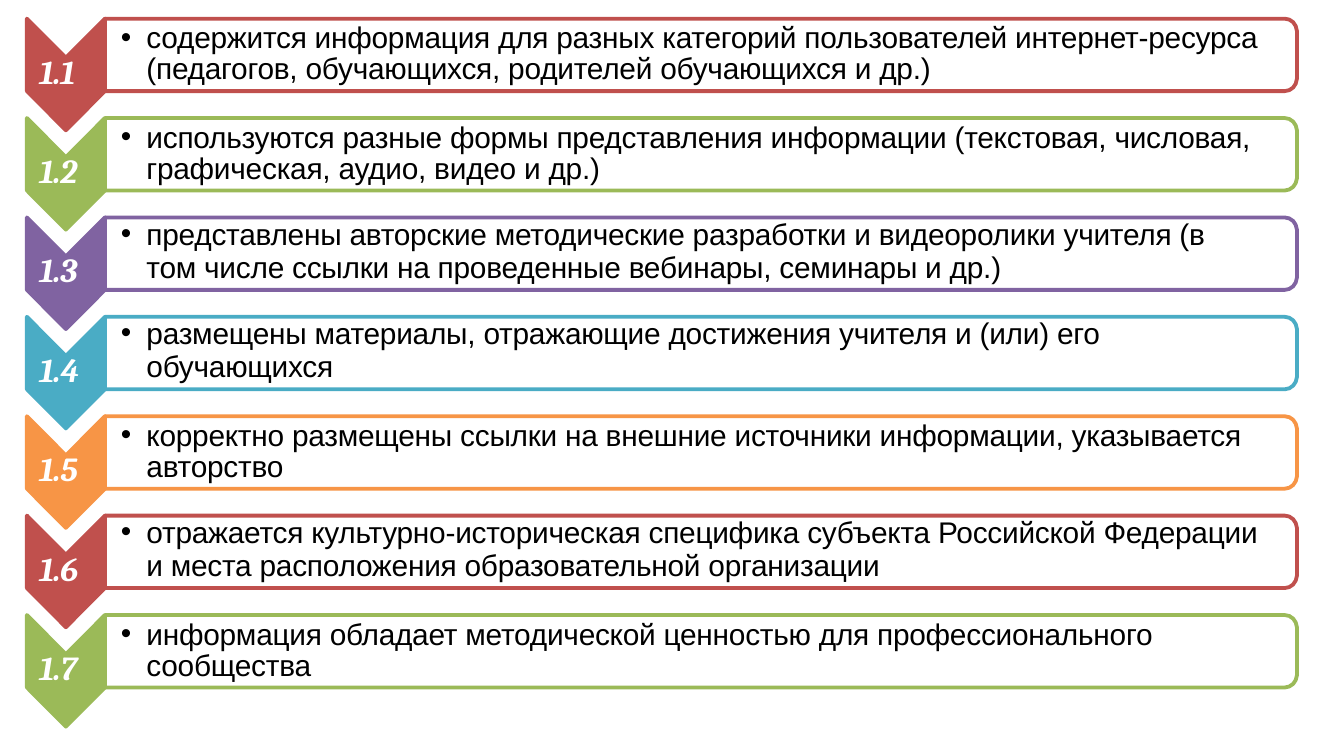
from itertools import cycle
from pptx import Presentation
from pptx.dml.color import RGBColor
from pptx.oxml import parse_xml
from pptx.oxml.ns import nsdecls
from pptx.util import Pt

WHITE = RGBColor(0xFF, 0xFF, 0xFF)
BLACK = RGBColor(0x00, 0x00, 0x00)
RED = RGBColor(0xC0, 0x50, 0x4D)
GREEN = RGBColor(0x9B, 0xBA, 0x58)
PURPLE = RGBColor(0x80, 0x63, 0xA1)
TEAL = RGBColor(0x4A, 0xAC, 0xC5)
ORANGE = RGBColor(0xF7, 0x95, 0x46)
HUES = [RED, GREEN, PURPLE, TEAL, ORANGE]

LEFT, TOP, PITCH = 14.4, 10, 53.25
ARROW, NOTCH, BAR, TALL = 41.8, 21, 638.6, 38.8

ITEMS = [
    ["содержится информация для разных категорий пользователей интернет-ресурса "
     "(педагогов, обучающихся, родителей обучающихся и др.)"],
    ["используются разные формы представления информации (текстовая, числовая, "
     "графическая, аудио, видео и др.)"],
    ["представлены авторские методические разработки и видеоролики учителя (в",
     "том числе ссылки на проведенные вебинары, семинары и др.)"],
    ["размещены материалы, отражающие достижения учителя и (или) его",
     "обучающихся"],
    ["корректно размещены ссылки на внешние источники информации, указывается "
     "авторство"],
    ["отражается культурно-историческая специфика субъекта Российской Федерации",
     "и места расположения образовательной организации"],
    ["информация обладает методической ценностью для профессионального "
     "сообщества"],
]


def add_form(slide, left, top, points, fill, hue):
    spots = [(Pt(left + x), Pt(top + y)) for x, y in points]
    pen = slide.shapes.build_freeform(*spots[0])
    pen.add_line_segments(spots[1:], close=True)
    form = pen.convert_to_shape()
    form.shadow.inherit = False
    form.fill.solid()
    form.fill.fore_color.rgb = fill
    form.line.color.rgb = hue
    form.line.width = Pt(2.04)


def add_frame(slide, left, top, width, height, inset):
    frame = slide.shapes.add_textbox(Pt(left), Pt(top), Pt(width), Pt(height)).text_frame
    frame.word_wrap = True
    frame.margin_left = frame.margin_right = frame.margin_bottom = 0
    frame.margin_top = Pt(inset)
    return frame


def set_font(para, name, size, color):
    para.font.name = name
    para.font.size = Pt(size)
    para.font.color.rgb = color
    para._p.get_or_add_pPr().get_or_add_defRPr().set("spc", "-10")


def add_arrow(slide, left, top, label, hue):
    mid = ARROW / 2
    points = [(ARROW, 0), (mid, NOTCH), (0, 0), (0, TALL),
              (mid, TALL + NOTCH), (ARROW, TALL)]
    add_form(slide, left, top, points, hue, hue)
    para = add_frame(slide, left + 6.7, top + 16.4, 28, 23.8, 0.7).paragraphs[0]
    para.text = label
    set_font(para, "Cambria", 18, WHITE)
    para.font.bold = para.font.italic = True


def add_bar(slide, left, top, lines, hue):
    curve = [(6.5, 0), (4.1, 0.5), (2, 1.9), (0.6, 4), (0, 6.5)]
    upper = [(BAR - x, y) for x, y in curve]
    lower = [(x, TALL - y) for x, y in reversed(upper)]
    add_form(slide, left, top, [(0, 0), *upper, *lower, (0, TALL)], WHITE, hue)
    split = len(lines) > 1
    frame = add_frame(slide, left + 0.7, top - 0.8, 635.8, 37.4, 0.9 if split else 3.6)
    for rank, line in enumerate(lines):
        para = frame.add_paragraph() if rank else frame.paragraphs[0]
        para.text = line
        para.line_spacing = Pt(17.9 if split else 16.6)
        props = para._p.get_or_add_pPr()
        props.set("marL", str(Pt(21.6)))
        props.set("indent", str(0 if rank else -Pt(13.7)))
        if not rank:
            props.append(parse_xml(f'<a:buFont {nsdecls("a")} typeface="Arial"/>'))
            props.append(parse_xml(f'<a:buChar {nsdecls("a")} char="•"/>'))
        set_font(para, "Arial", 16, BLACK)


def main():
    deck = Presentation()
    deck.slide_width, deck.slide_height = Pt(720), Pt(405)
    slide = deck.slides.add_slide(deck.slide_layouts[6])
    for row, (lines, hue) in enumerate(zip(ITEMS, cycle(HUES))):
        top = TOP + row * PITCH
        add_arrow(slide, LEFT, top, f"1.{row + 1}", hue)
        add_bar(slide, LEFT + ARROW, top, lines, hue)
    deck.save("out.pptx")


if __name__ == "__main__":
    main()
